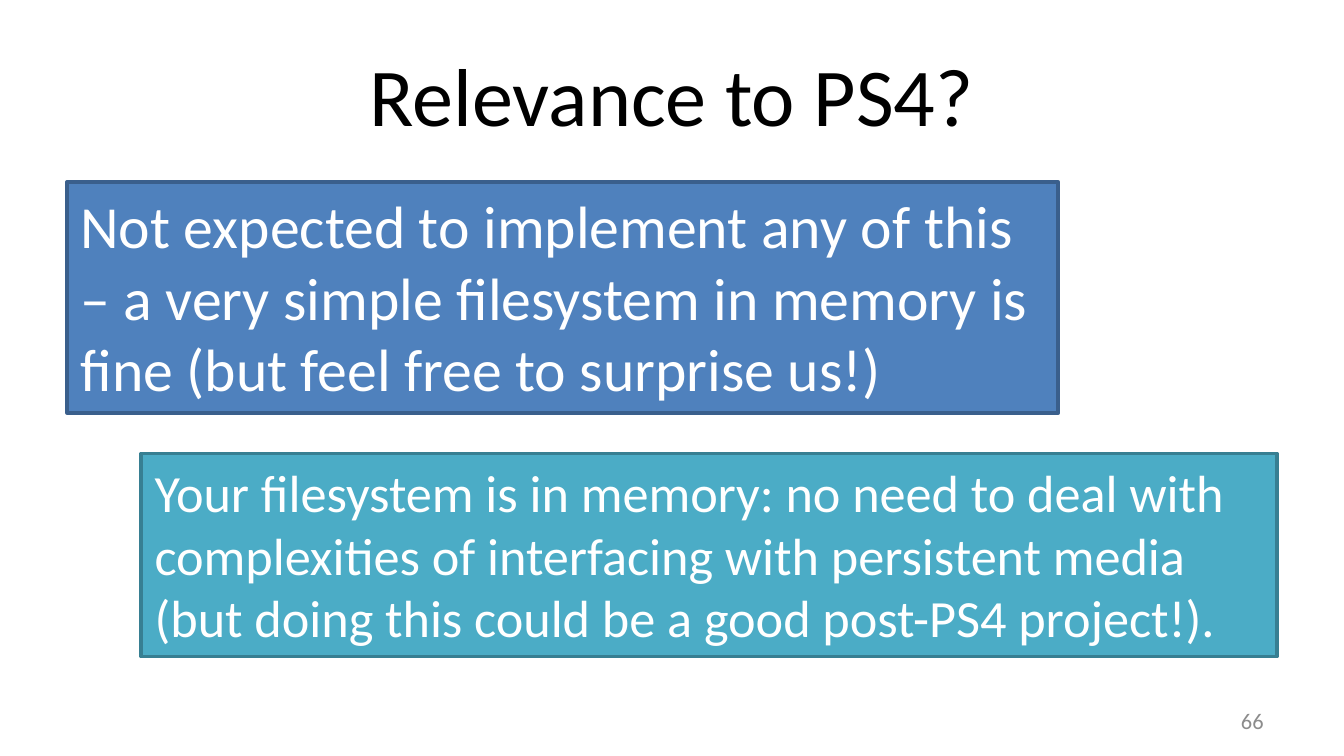
from dataclasses import dataclass

from pptx import Presentation
from pptx.dml.color import RGBColor as Rgb
from pptx.enum.shapes import MSO_SHAPE as Shape
from pptx.enum.text import MSO_ANCHOR as Anchor, MSO_AUTO_SIZE as Fit, PP_ALIGN as Align
from pptx.slide import Slide
from pptx.text.text import TextFrame
from pptx.util import Emu, Pt

PX = 9525  # EMU per px, 96 px to the inch


@dataclass(frozen=True)
class Theme:
    font: str = "Calibri"
    black: str = "000000"
    white: str = "FFFFFF"
    gray: str = "8C8C8C"
    blue: str = "4F81BD"
    navy: str = "3A5F8C"
    aqua: str = "4BACC6"
    teal: str = "377F92"
    title: int = 44
    large: int = 32
    body: int = 28
    small: int = 12
    edge: int = 2


@dataclass(frozen=True)
class Box:
    left: int
    top: int
    width: int
    height: int

    def emu(self) -> tuple[Emu, ...]:
        sides = (self.left, self.top, self.width, self.height)
        return tuple(Emu(n * PX) for n in sides)


@dataclass(frozen=True)
class Note:
    box: Box
    text: str
    size: int
    fill: str
    line: str


THEME = Theme()
NOTES = (
    Note(Box(48, 130, 708, 165),
         "Not expected to implement any of this – a very simple filesystem "
         "in memory is fine (but feel free to surprise us!)",
         THEME.large, THEME.blue, THEME.navy),
    Note(Box(101, 324, 811, 145),
         "Your filesystem is in memory: no need to deal with complexities of "
         "interfacing with persistent media (but doing this could be a good "
         "post-PS4 project!).",
         THEME.body, THEME.aqua, THEME.teal),
)


def write(frame: TextFrame, text: str, size: int, color: str,
          align: Align, anchor: Anchor) -> None:
    frame.word_wrap = True
    frame.vertical_anchor = anchor
    para = frame.paragraphs[0]
    para.alignment = align
    run = para.add_run()
    run.text = text
    run.font.name = THEME.font
    run.font.size = Pt(size)
    run.font.color.rgb = Rgb.from_string(color)


def add_title(slide: Slide, box: Box, text: str) -> None:
    title = slide.shapes.title
    title.left, title.top, title.width, title.height = box.emu()
    title.text_frame.auto_size = Fit.NONE
    write(title.text_frame, text, THEME.title, THEME.black,
          Align.CENTER, Anchor.MIDDLE)


def add_page(slide: Slide, box: Box, text: str) -> None:
    page = slide.shapes.add_textbox(*box.emu())
    write(page.text_frame, text, THEME.small, THEME.gray,
          Align.RIGHT, Anchor.MIDDLE)


def add_note(slide: Slide, note: Note) -> None:
    shape = slide.shapes.add_shape(Shape.RECTANGLE, *note.box.emu())
    shape.shadow.inherit = False
    shape.fill.solid()
    shape.fill.fore_color.rgb = Rgb.from_string(note.fill)
    shape.line.color.rgb = Rgb.from_string(note.line)
    shape.line.width = Pt(THEME.edge)
    shape.text_frame.auto_size = Fit.SHAPE_TO_FIT_TEXT
    write(shape.text_frame, note.text, note.size, THEME.white,
          Align.LEFT, Anchor.TOP)


def main() -> None:
    deck = Presentation()
    deck.slide_width, deck.slide_height = Emu(960 * PX), Emu(540 * PX)
    slide = deck.slides.add_slide(deck.slide_layouts[5])  # title only

    # Title and page number
    add_title(slide, Box(48, 22, 864, 90), "Relevance to PS4?")
    add_page(slide, Box(688, 500, 224, 29), "66")

    # Coloured notes
    for note in NOTES:
        add_note(slide, note)

    deck.save("out.pptx")


if __name__ == "__main__":
    main()
